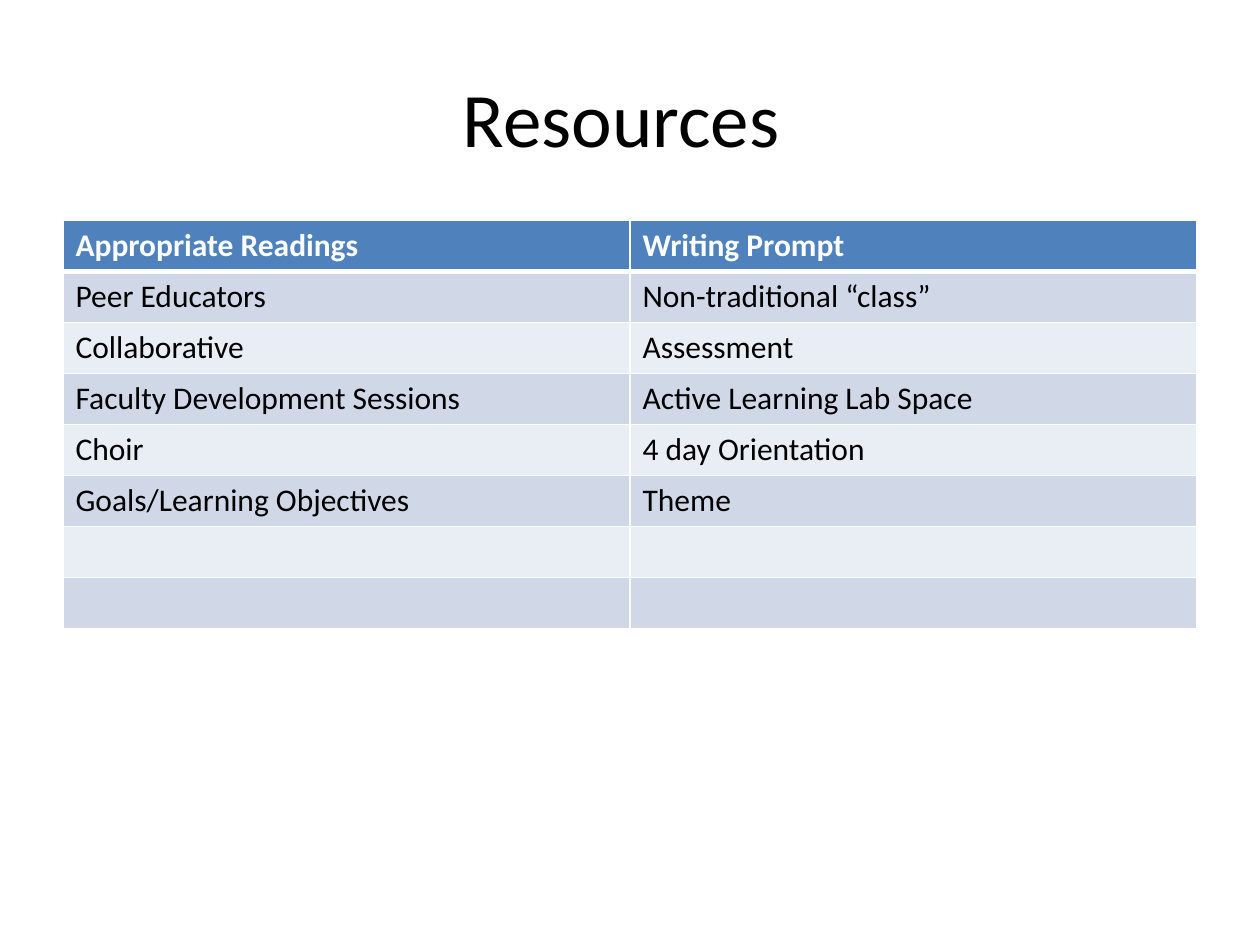
import pptx
import pptx.dml.color
import pptx.enum.text
import pptx.oxml
import pptx.oxml.ns
import pptx.util
from dataclasses import dataclass


@dataclass(frozen=True)
class Theme:
    font: str = "Calibri"
    title_size: int = 44
    cell_size: int = 18
    ink: str = "000000"
    white: str = "FFFFFF"
    header: str = "4F81BD"
    bands: tuple = ("D0D8E8", "E9EDF4")
    rule: int = 1
    header_rule: int = 3


theme = Theme()


def set_font(paragraph, size, color, bold=False):
    paragraph.font.name = theme.font
    paragraph.font.size = pptx.util.Pt(size)
    paragraph.font.bold = bold
    paragraph.font.color.rgb = pptx.dml.color.RGBColor.from_string(color)


def set_borders(cell, widths):
    """Draw the left, right, top and bottom rules, which precede the fill."""
    properties = cell._tc.get_or_add_tcPr()
    for position, (side, points) in enumerate(zip("LRTB", widths)):
        properties.insert(position, pptx.oxml.parse_xml(
            f'<a:ln{side} {pptx.oxml.ns.nsdecls("a")} w="{pptx.util.Pt(points)}">'
            f'<a:solidFill><a:srgbClr val="{theme.white}"/></a:solidFill></a:ln{side}>'))


presentation = pptx.Presentation()
presentation.slide_width = pptx.util.Inches(10)
presentation.slide_height = pptx.util.Inches(7.5)
slide = presentation.slides.add_slide(presentation.slide_layouts[6])

# Shared page measures
margin = int(presentation.slide_width * 0.05)
content_width = presentation.slide_width - 2 * margin

# Title
title = slide.shapes.add_textbox(margin, int(presentation.slide_height * 0.04),
                                 content_width, pptx.util.Inches(1.25)).text_frame
title.word_wrap = True
title.vertical_anchor = pptx.enum.text.MSO_ANCHOR.MIDDLE
heading = title.paragraphs[0]
heading.text = "Resources "
heading.alignment = pptx.enum.text.PP_ALIGN.CENTER
set_font(heading, theme.title_size, theme.ink)

# Resource table: a header, five filled rows and two open rows
resources = [
    ("Appropriate Readings", "Writing Prompt"),
    ("Peer Educators", "Non-traditional “class”"),
    ("Collaborative", "Assessment"),
    ("Faculty Development Sessions", "Active Learning Lab Space"),
    ("Choir", "4 day Orientation"),
    ("Goals/Learning Objectives", "Theme"),
    ("", ""),
    ("", ""),
]
table = slide.shapes.add_table(len(resources), len(resources[0]), margin,
                               pptx.util.Inches(1.75), content_width,
                               pptx.util.Inches(3.24)).table

for row, entries in enumerate(resources):
    is_header = row == 0
    fill = theme.header if is_header else theme.bands[(row - 1) % 2]
    top = theme.header_rule if row == 1 else theme.rule
    bottom = theme.header_rule if is_header else theme.rule
    for column, entry in enumerate(entries):
        cell = table.cell(row, column)
        cell.text = entry
        cell.fill.solid()
        cell.fill.fore_color.rgb = pptx.dml.color.RGBColor.from_string(fill)
        set_borders(cell, (theme.rule, theme.rule, top, bottom))
        set_font(cell.text_frame.paragraphs[0], theme.cell_size,
                 theme.white if is_header else theme.ink, is_header)

presentation.save("out.pptx")
